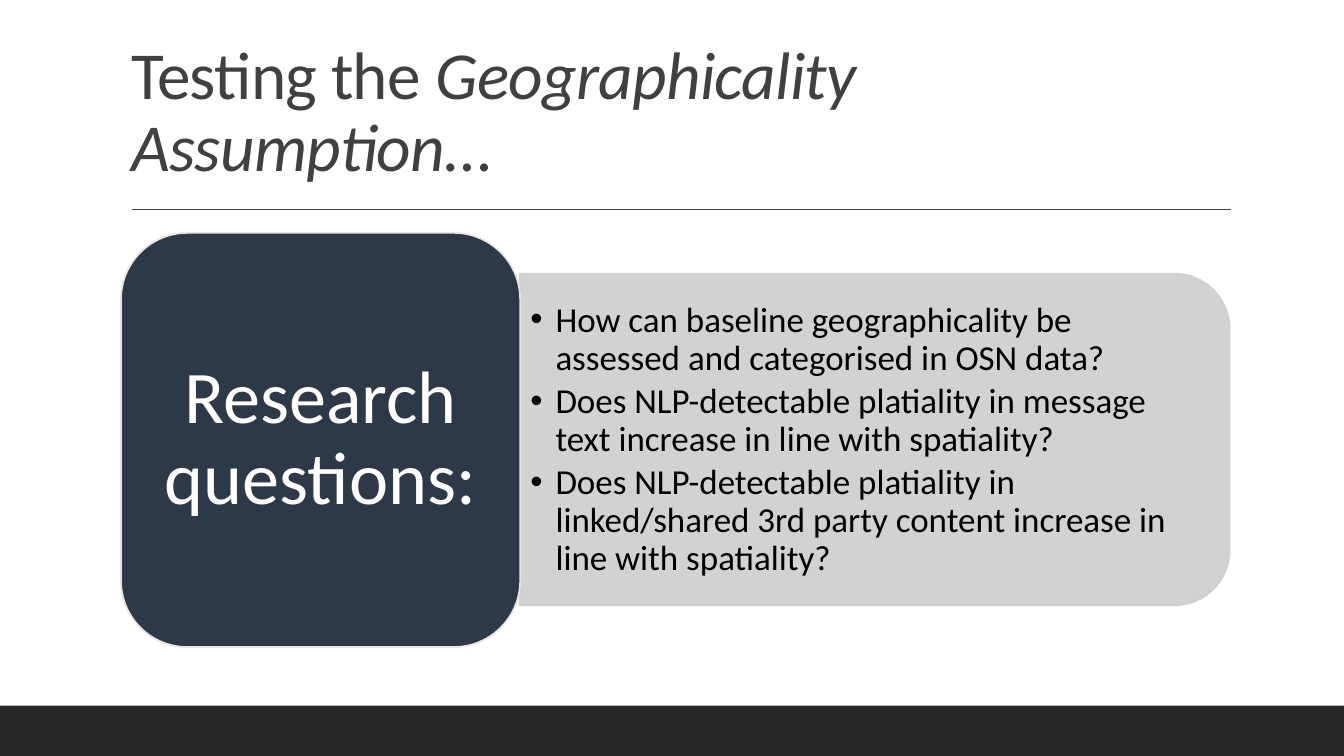
from lxml import etree
from pptx import Presentation
from pptx import util as u
from pptx.dml.color import RGBColor
from pptx.enum import shapes, text
from pptx.oxml import ns

PX = 9144  # EMU per px, 100 px to the inch
FONT = "Calibri"
COLORS = {
    "footer": "262626",
    "heading": "404040",
    "panel": "CDCECF",
    "card": "2E3948",
    "card_edge": "E7E6E6",
    "body": "000000",
    "white": "FFFFFF",
}
TITLE_RUNS = [("Testing the ", False), ("Geographicality Assumption", True), ("…", False)]
QUESTIONS = [
    "How can baseline geographicality be assessed and categorised in OSN data?",
    "Does NLP-detectable platiality in message text increase in line with spatiality?",
    "Does NLP-detectable platiality in linked/shared 3rd party content increase in line with spatiality?",
]


def px(*lengths):
    return [u.Emu(length * PX) for length in lengths]


def color(name):
    return RGBColor.from_string(COLORS[name])


def place(shape, box):
    shape.left, shape.top, shape.width, shape.height = px(*box)


def set_frame(shape, anchor, inset_x=10, inset_y=5):
    frame = shape.text_frame
    frame.word_wrap = True
    frame.auto_size = text.MSO_AUTO_SIZE.NONE
    frame.vertical_anchor = anchor
    frame.margin_left = frame.margin_right = px(inset_x)[0]
    frame.margin_top = frame.margin_bottom = px(inset_y)[0]
    return frame


def set_spacing(paragraph, alignment, after=0):
    paragraph.alignment = alignment
    paragraph.line_spacing = 0.9
    paragraph.space_before = u.Pt(0)
    paragraph.space_after = u.Pt(after)


def add_run(paragraph, wording, size, color_name, italic=False):
    run = paragraph.add_run()
    run.text = wording
    run.font.name = FONT
    run.font.size = u.Pt(size)
    run.font.italic = italic
    run.font.color.rgb = color(color_name)
    return run


def set_alpha(color_format_parent, percent):
    """Make every solid colour below the element partly transparent."""
    for rgb in color_format_parent.iter(ns.qn("a:srgbClr")):
        etree.SubElement(rgb, ns.qn("a:alpha")).set("val", str(percent * 1000))


def add_block(slide, kind, box, fill, edge=None):
    shape = slide.shapes.add_shape(kind, *px(*box))
    shape.shadow.inherit = False
    shape.fill.solid()
    shape.fill.fore_color.rgb = color(fill)
    if edge:
        shape.line.color.rgb = color(edge)
        shape.line.width = u.Pt(1.25)
    else:
        shape.line.fill.background()
    return shape


def add_rule(slide, left, right, y):
    rule = slide.shapes.add_connector(shapes.MSO_CONNECTOR.STRAIGHT, *px(left, y, right, y))
    rule.line.color.rgb = color("heading")
    rule.line.width = u.Pt(1)
    etree.SubElement(rule._element.spPr, ns.qn("a:effectLst"))


def fill_title(title):
    place(title, (120, 31, 1100, 159))
    paragraph = set_frame(title, text.MSO_ANCHOR.BOTTOM).paragraphs[0]
    set_spacing(paragraph, text.PP_ALIGN.LEFT)
    for wording, italic in TITLE_RUNS:
        run = add_run(paragraph, wording, 48, "heading", italic)
        run.font._element.set("spc", "-50")


def add_panel(slide):
    panel = add_block(slide, shapes.MSO_SHAPE.ROUND_2_SAME_RECTANGLE,
                      (703, 84, 329, 704), "panel", "panel")
    panel.rotation = 90
    set_alpha(panel._element.spPr, 90)


def add_card(slide, wording):
    card = add_block(slide, shapes.MSO_SHAPE.ROUNDED_RECTANGLE,
                     (120, 231, 396, 411), "card", "card_edge")
    paragraph = set_frame(card, text.MSO_ANCHOR.MIDDLE, 22, 11).paragraphs[0]
    set_spacing(paragraph, text.PP_ALIGN.CENTER)
    add_run(paragraph, wording, 53, "white")


def fill_questions(body):
    place(body, (516, 288, 688, 297))
    frame = set_frame(body, text.MSO_ANCHOR.MIDDLE)
    for index, question in enumerate(QUESTIONS):
        paragraph = frame.add_paragraph() if index else frame.paragraphs[0]
        properties = paragraph._p.get_or_add_pPr()
        indent = px(25)[0]
        properties.set("marL", str(indent))
        properties.set("indent", str(-indent))
        etree.SubElement(properties, ns.qn("a:buChar")).set("char", "•")
        set_spacing(paragraph, text.PP_ALIGN.LEFT, after=4)
        add_run(paragraph, question, 25, "body")


def main():
    presentation = Presentation()
    presentation.slide_width, presentation.slide_height = px(1333, 750)
    slide = presentation.slides.add_slide(presentation.slide_layouts[1])
    body = slide.placeholders[1]

    add_block(slide, shapes.MSO_SHAPE.RECTANGLE, (0, 700, 1333, 50), "footer")
    add_rule(slide, 131, 1221, 208)
    fill_title(slide.shapes.title)
    add_panel(slide)
    fill_questions(body)
    slide.shapes._spTree.append(body._element)  # list in front of its panel
    add_card(slide, "Research questions:")
    presentation.save("out.pptx")


if __name__ == "__main__":
    main()
